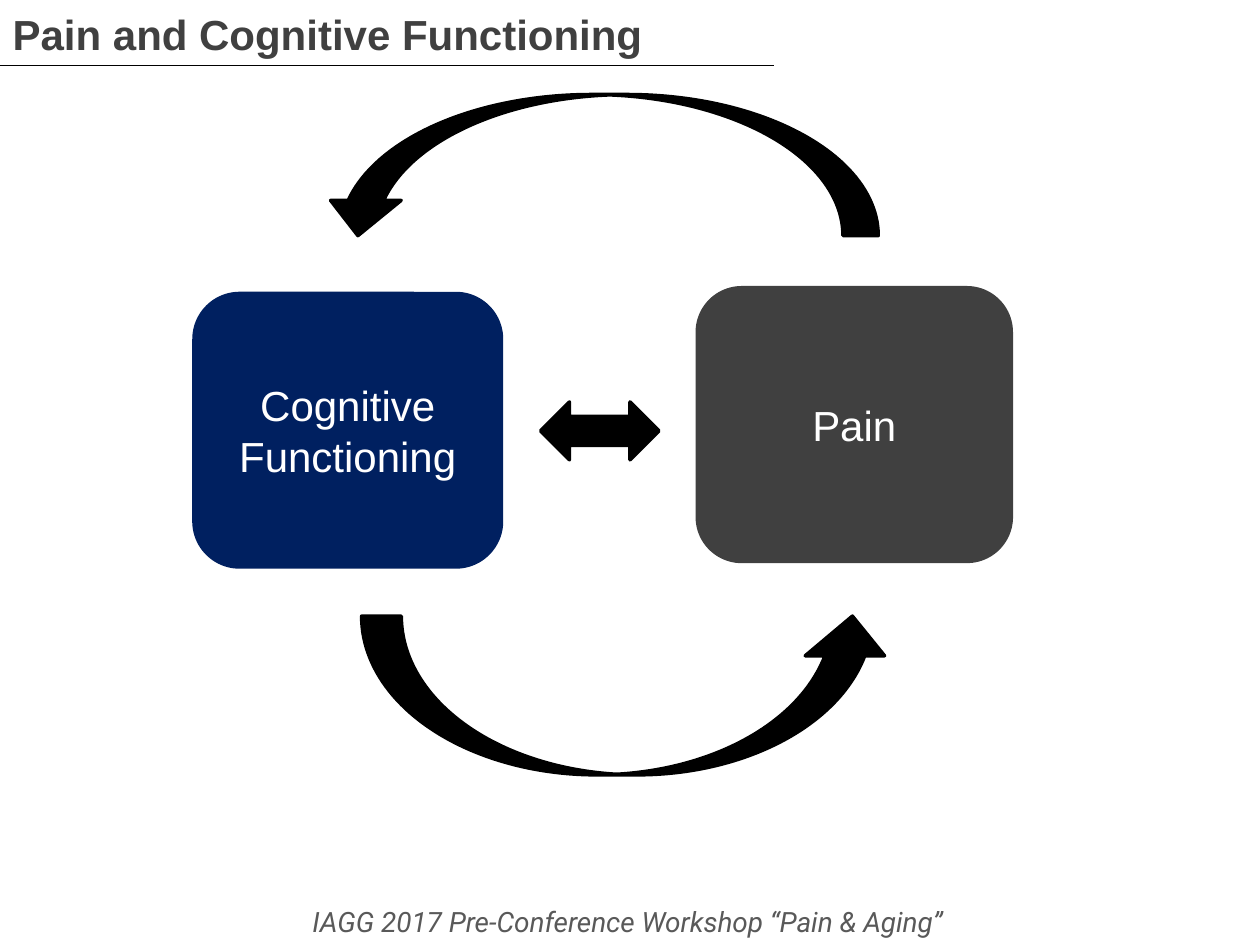
from pptx import Presentation
from pptx.dml.color import RGBColor
from pptx.enum.shapes import MSO_CONNECTOR, MSO_SHAPE
from pptx.enum.text import MSO_ANCHOR, MSO_AUTO_SIZE, PP_ALIGN
from pptx.oxml.ns import qn
from pptx.util import Inches, Pt
from lxml import etree

COLORS = {"navy": "002060", "gray": "404040", "footer": "595959",
          "black": "000000", "white": "FFFFFF"}


def rgb(name):
    return RGBColor.from_string(COLORS[name])


def write(shape, text, font, size, color, align):
    tf = shape.text_frame
    tf.word_wrap = True
    tf.auto_size = MSO_AUTO_SIZE.NONE
    p = tf.paragraphs[0]
    p.text = text
    p.alignment = align
    p.font.name = font
    p.font.size = Pt(size)
    p.font.color.rgb = rgb(color)
    return p


prs = Presentation()
prs.slide_width, prs.slide_height = Inches(10), Inches(7.5)
s = prs.slides.add_slide(prs.slide_layouts[5])

# Title
title = s.shapes.title
title.left, title.top = Inches(0), Inches(0.02)
title.width, title.height = Inches(9.39), Inches(0.5)
p = write(title, "Pain and Cognitive Functioning", "Arial", 24, "gray", PP_ALIGN.LEFT)
p.font.bold = True
title.text_frame.vertical_anchor = MSO_ANCHOR.TOP

# Rule under the title
rule = s.shapes.add_connector(MSO_CONNECTOR.STRAIGHT, Inches(-0.04), Inches(0.52),
                              Inches(6.14), Inches(0.52))
rule.line.color.rgb = rgb("black")
rule.line.width = Pt(0.75)
etree.SubElement(rule._element.spPr, qn("a:effectLst"))

# Concept boxes
boxes = [("Cognitive Functioning", "navy", 1.54, 2.33, 2.44, 2.17),
         ("Pain", "gray", 5.52, 2.27, 2.52, 2.2)]
for text, color, *place in boxes:
    sp = s.shapes.add_shape(MSO_SHAPE.FLOWCHART_ALTERNATE_PROCESS, *map(Inches, place))
    sp.shadow.inherit = False
    sp.fill.solid()
    sp.fill.fore_color.rgb = rgb(color)
    if color == "navy":
        sp.line.color.rgb = rgb(color)
        sp.line.width = Pt(2)
    else:
        sp.line.fill.background()
    write(sp, text, "Arial", 24, "white", PP_ALIGN.CENTER)
    sp.text_frame.vertical_anchor = MSO_ANCHOR.MIDDLE

# Arrows: below, above (turned half round) and between the boxes
arrows = [(MSO_SHAPE.CURVED_UP_ARROW, 0, 2.87, 4.89, 4.21, 1.26),
          (MSO_SHAPE.CURVED_UP_ARROW, 180, 2.56, 0.75, 4.41, 1.12),
          (MSO_SHAPE.LEFT_RIGHT_ARROW, 0, 4.29, 3.19, 0.94, 0.46)]
for kind, rotation, *place in arrows:
    sp = s.shapes.add_shape(kind, *map(Inches, place))
    sp.rotation = rotation
    sp.shadow.inherit = False
    sp.fill.solid()
    sp.fill.fore_color.rgb = rgb("black")
    sp.line.color.rgb = rgb("black")
    sp.line.width = Pt(2)

# Footer
footer = s.shapes.add_textbox(Inches(0.02), Inches(7.13), Inches(9.98), Inches(0.37))
p = write(footer, "IAGG 2017 Pre-Conference Workshop “Pain & Aging” ", "Roboto", 16,
          "footer", PP_ALIGN.CENTER)
p.font.italic = True

prs.save("out.pptx")
